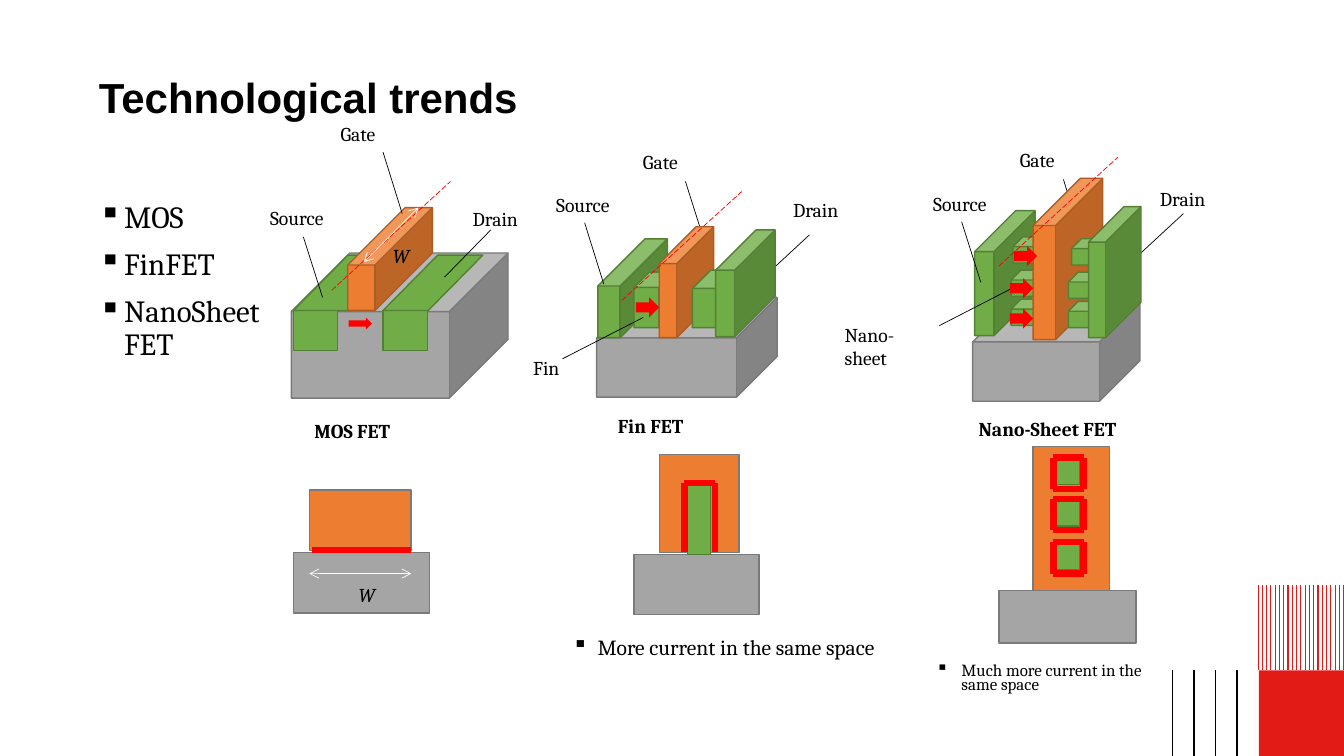
"""Build the slide on technological trends from MOS to nano-sheet transistors."""
import lxml.etree
import pptx
import pptx.dml.color
import pptx.enum.dml
import pptx.enum.shapes
import pptx.oxml.ns
import pptx.util

Pt = pptx.util.Pt
RGB = pptx.dml.color.RGBColor
KIND = pptx.enum.shapes.MSO_SHAPE
qn = pptx.oxml.ns.qn

BLACK = RGB(0x00, 0x00, 0x00)
WHITE = RGB(0xFF, 0xFF, 0xFF)
RED = RGB(0xFF, 0x00, 0x00)
CORNER_RED = RGB(0xE3, 0x1B, 0x17)
GREY, GREY_EDGE = RGB(0xA5, 0xA5, 0xA5), RGB(0x7A, 0x7A, 0x7A)
GREEN, GREEN_EDGE = RGB(0x70, 0xAD, 0x47), RGB(0x53, 0x80, 0x35)
ORANGE, ORANGE_EDGE = RGB(0xED, 0x7D, 0x31), RGB(0xAF, 0x5C, 0x24)

deck = pptx.Presentation()
deck.slide_width, deck.slide_height = Pt(960), Pt(540)
page = deck.slides.add_slide(deck.slide_layouts[6])


def write_text(text, left, top, width, height=24.5, size=14, font="Cambria", bold=False,
               italic=False, wrap=True, inset=True, bullet=False, spacing=None):
    box = page.shapes.add_textbox(Pt(left), Pt(top), Pt(width), Pt(height))
    frame = box.text_frame
    frame.word_wrap = wrap
    if not inset:
        frame.margin_left = frame.margin_right = frame.margin_top = frame.margin_bottom = 0
    for index, line in enumerate(text.split("\n")):
        para = frame.paragraphs[0] if index == 0 else frame.add_paragraph()
        if bullet:
            properties = para._p.get_or_add_pPr()
            properties.set("marL", str(Pt(18)))
            properties.set("indent", str(Pt(-18)))
            lxml.etree.SubElement(properties, qn("a:buChar")).set("char", "▪")
        if spacing:
            para.line_spacing = spacing
        if index:
            para.space_before = Pt(10)
        span = para.add_run()
        span.text = line
        span.font.name, span.font.size = font, Pt(size)
        span.font.bold, span.font.italic = bold, italic
        span.font.color.rgb = BLACK


def draw_line(x1, y1, x2, y2, color=BLACK, width=0.5, dashed=False, arrows=False):
    line = page.shapes.add_connector(
        pptx.enum.shapes.MSO_CONNECTOR.STRAIGHT, Pt(x1), Pt(y1), Pt(x2), Pt(y2))
    line.line.color.rgb = color
    line.line.width = Pt(width)
    if dashed:
        line.line.dash_style = pptx.enum.dml.MSO_LINE.LONG_DASH
    properties = line._element.spPr
    if arrows:
        for end in ("a:headEnd", "a:tailEnd"):
            lxml.etree.SubElement(properties.find(qn("a:ln")), qn(end)).set("type", "arrow")
    lxml.etree.SubElement(properties, qn("a:effectLst"))


stripe_right, stripe_top, stripe_bottom = 959.8, 417.6, 478.8
builder = page.shapes.build_freeform(Pt(stripe_right), Pt(stripe_bottom))
for index in range(21):
    x = Pt(stripe_right - 3.06 * index)
    builder.move_to(x, Pt(stripe_bottom))
    builder.add_line_segments([(x, Pt(stripe_top))], close=False)
stripes = builder.convert_to_shape()
stripes.shadow.inherit = False
stripes.fill.background()
stripes.line.color.rgb = CORNER_RED
stripes.line.width = Pt(0.75)

for index in range(4):
    x = 837.4 + 15.36 * index
    draw_line(x, 478.8, x, 540, width=1)

hidden_end_leaders = [
    (489.6, 129.6, 503.3, 172.8), (578.2, 167.8, 539.3, 203.8),
    (759.6, 128.2, 773.3, 172.1), (845.3, 152.6, 806.4, 188.6)]
for leader in hidden_end_leaders:
    draw_line(*leader)

substrate, region, gate = (GREY, GREY_EDGE), (GREEN, GREEN_EDGE), (ORANGE, ORANGE_EDGE)
gate_section = (ORANGE, GREY_EDGE)
transistor_parts = [
    (KIND.CUBE, substrate, 0.404, 208.1, 180.7, 154.8, 103.7),
    (KIND.RECTANGLE, region, None, 209.5, 221.8, 31.7, 28.8),
    (KIND.RECTANGLE, region, None, 273.6, 221.8, 31.7, 28.8),
    (KIND.PARALLELOGRAM, region, 0.987, 209.5, 182.2, 79.9, 39.6),
    (KIND.PARALLELOGRAM, region, 0.987, 273.6, 182.2, 71.3, 39.6),
    (KIND.CUBE, gate, 0.678, 248.4, 148.3, 60.5, 73.4),
    (KIND.CUBE, substrate, 0.406, 426.2, 212.4, 128.9, 71.3),
    (KIND.CUBE, region, 0.678, 427, 170.6, 49.7, 70.6),
    (KIND.CUBE, region, 0.376, 452.9, 194.4, 28.8, 39.6),
    (KIND.CUBE, gate, 0.678, 470.9, 162, 38.9, 79.2),
    (KIND.CUBE, region, 0.376, 494.6, 193, 34.6, 41),
    (KIND.CUBE, region, 0.678, 511.2, 164.2, 42.5, 76.3),
    (KIND.CUBE, substrate, 0.406, 694.8, 215.3, 119.5, 71.3),
    (KIND.CUBE, region, 0.678, 696.2, 150.5, 43.2, 89.3),
    (KIND.CUBE, region, 0.376, 722.2, 213.8, 29.5, 18.7),
    (KIND.CUBE, region, 0.376, 722.2, 193, 29.5, 18.7),
    (KIND.CUBE, region, 0.376, 723.6, 169.2, 29.5, 18.7),
    (KIND.CUBE, gate, 0.678, 738, 127.4, 49.7, 115.2),
    (KIND.CUBE, region, 0.376, 763.2, 215.3, 29.5, 18.7),
    (KIND.CUBE, region, 0.376, 763.2, 194.4, 29.5, 18.7),
    (KIND.CUBE, region, 0.376, 765.4, 170.6, 29.5, 18.7),
    (KIND.CUBE, region, 0.678, 777.6, 147.6, 37.4, 93.6),
    (KIND.RECTANGLE, substrate, None, 209.5, 394.6, 97.2, 43.2),
    (KIND.RECTANGLE, gate_section, None, 221, 349.9, 72.7, 43.2),
    (KIND.RECTANGLE, substrate, None, 452.9, 396, 89.3, 43.2),
    (KIND.RECTANGLE, gate_section, None, 470.9, 324.7, 56.9, 69.8),
    (KIND.RECTANGLE, region, None, 491, 346.3, 16.6, 49.7),
    (KIND.RECTANGLE, substrate, None, 713.5, 421.9, 97.9, 37.4),
    (KIND.RECTANGLE, gate_section, None, 738, 319, 54.7, 103),
    (KIND.RECTANGLE, region, None, 754.6, 328.3, 16.6, 18),
    (KIND.RECTANGLE, region, None, 754.6, 357.8, 16.6, 18),
    (KIND.RECTANGLE, region, None, 754.6, 388.8, 16.6, 18)]
for kind, (fill, edge), depth, *bounds in transistor_parts:
    part = page.shapes.add_shape(kind, *map(Pt, bounds))
    part.shadow.inherit = False
    part.fill.solid()
    part.fill.fore_color.rgb = fill
    part.line.color.rgb = edge
    part.line.width = Pt(1)
    if depth:
        part.adjustments[0] = depth

draw_line(223.2, 393.1, 293.8, 393.1, color=RED, width=4.5)
channels = [(488.9, 344.9, 49.7, False)] + [(752.4, y, 22.3, True) for y in (326.9, 356.4, 387.4)]
for left, top, height, closed in channels:
    right, bottom = left + 21.6, top + height
    sides = [(left, top, right, top), (left, top, left, bottom), (right, top, right, bottom)]
    if closed:
        sides.append((left, bottom, right, bottom))
    for side in sides:
        draw_line(*side, color=RED, width=4.5)

front_leaders = [
    (273.6, 108.7, 287.3, 152.6), (216.7, 169.2, 230.4, 212.4), (350.6, 164.2, 317.5, 198),
    (417.6, 159.1, 431.3, 203), (686.9, 158.4, 700.6, 201.6),
    (401.8, 256.3, 459.4, 226.8), (671, 232.6, 728.6, 203)]
for leader in front_leaders:
    draw_line(*leader)
for cut in [(236.9, 207.4, 321.8, 129.6), (444.2, 214.6, 529.9, 136.8), (713.5, 190.1, 798.5, 112.3)]:
    draw_line(*cut, color=RED, dashed=True)
for extent in [(221, 409.7, 293.8, 409.7), (259.9, 187.2, 298.8, 148.3)]:
    draw_line(*extent, color=WHITE, arrows=True)

red_blocks = [
    (KIND.RECTANGLE, CORNER_RED, 899.3, 478.8, 61.2, 61.2),
    (KIND.RIGHT_ARROW, RED, 249.1, 226.8, 16.6, 8.6),
    (KIND.RIGHT_ARROW, RED, 454.3, 212.4, 16.6, 14.4),
    (KIND.RIGHT_ARROW, RED, 724.3, 175.7, 16.6, 14.4),
    (KIND.RIGHT_ARROW, RED, 721.4, 198.7, 16.6, 14.4),
    (KIND.RIGHT_ARROW, RED, 721.4, 220.3, 16.6, 14.4)]
for kind, fill, *bounds in red_blocks:
    block = page.shapes.add_shape(kind, *map(Pt, bounds))
    block.shadow.inherit = False
    block.fill.solid()
    block.fill.fore_color.rgb = fill
    block.line.fill.background()

labels = [
    ("Gate", 236.2, 83.5), ("Source", 185.8, 143.3), ("Drain", 330.5, 144),
    ("Gate", 452.2, 103.7), ("Source", 390.2, 134.6), ("Drain", 559.4, 137.5),
    ("Gate", 721.4, 102.2), ("Source", 659.5, 133.9), ("Drain", 821.5, 130.3)]
for label, left, top in labels:
    write_text(label, left, top, 75)
write_text("Fin", 373.7, 250.6, 40.3)
write_text("Nano-sheet", 596.2, 226.8, 77.8, height=41)
write_text("W", 249.1, 412.6, 77.8, italic=True)
write_text("W", 273.6, 170.6, 34.6, italic=True)
captions = [("MOS FET", 217.4, 295.9, 82.8), ("Fin FET", 434.2, 292.3, 72),
            ("Nano-Sheet FET", 691.9, 294.5, 132.5)]
for caption in captions:
    write_text(*caption, bold=True, wrap=False)

write_text("Technological trends", 70.6, 55.4, 819.4, height=104.4, size=30, font="Arial",
           bold=True, inset=False, spacing=0.9)
write_text("MOS\nFinFET\nNanoSheet FET", 70.6, 144, 127.4, height=342.7, size=22,
           inset=False, bullet=True, spacing=0.9)
write_text("More current in the same space", 401.8, 454.3, 241.2, height=28.1, size=15.4,
           bullet=True, spacing=0.7)
write_text("Much more current in the same space", 661.7, 471.6, 172.8, height=28.1, size=12.1,
           bullet=True, spacing=0.7)

deck.save("out.pptx")
